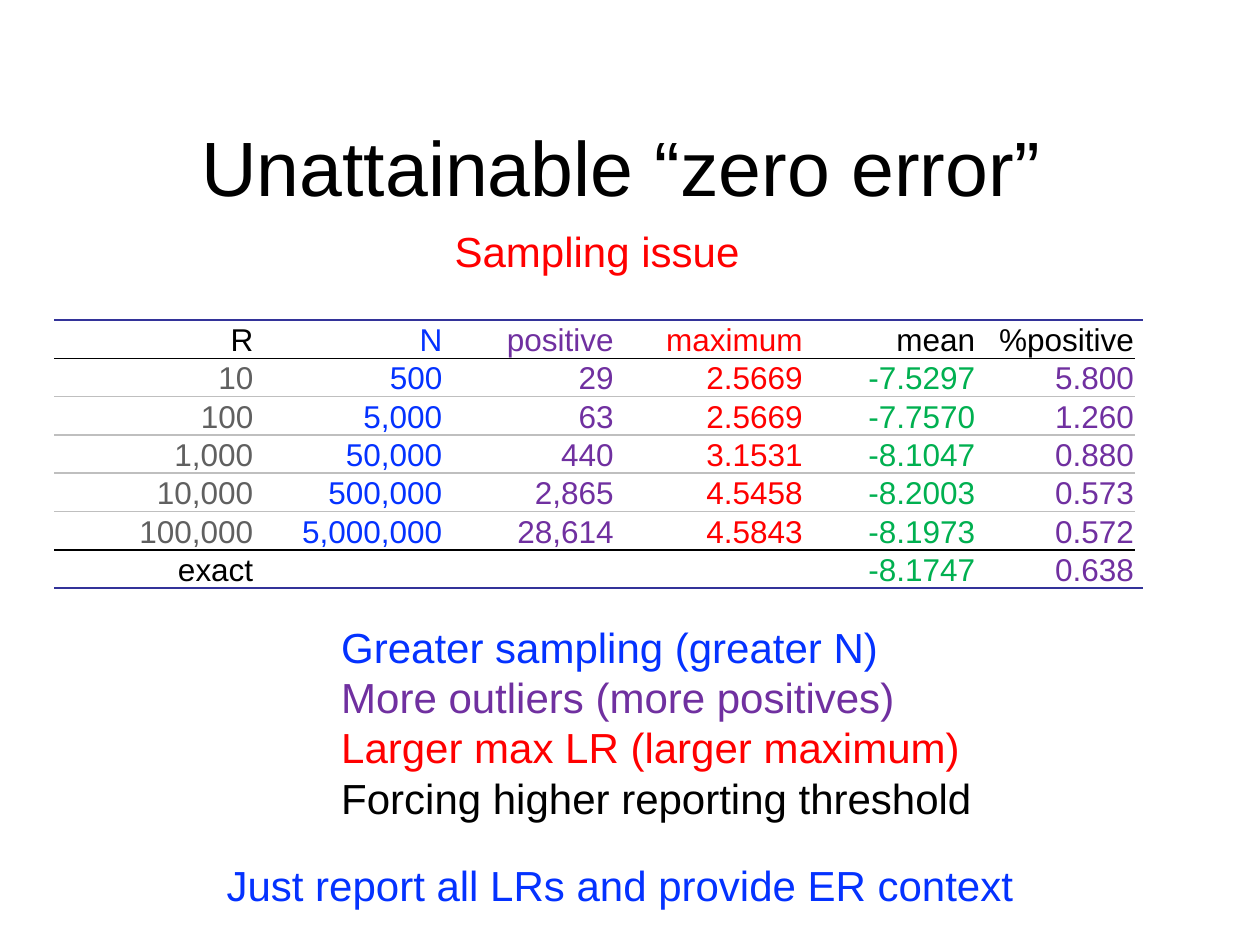
from lxml.etree import SubElement as Sub
from pptx import Presentation
from pptx.dml.color import RGBColor
from pptx.enum.text import MSO_ANCHOR as Anchor, MSO_AUTO_SIZE as Fit, PP_ALIGN as Align
from pptx.oxml import parse_xml
from pptx.oxml.ns import nsdecls, qn
from pptx.util import Inches, Pt

BLACK, BLUE, PURPLE, RED = "000000", "0432FF", "7030A0", "FF0000"
GREEN, GRAY, NAVY, RULE = "00B050", "606060", "333399", "BFBFBF"
PLAIN = "{2D5ABB26-0587-4C30-8999-92F81FD0307C}"

ROWS = [
    ["R", "N", "positive", "maximum", "mean", "%positive", ""],
    ["10", "500", "29", "2.5669", "-7.5297", "5.800", ""],
    ["100", "5,000", "63", "2.5669", "-7.7570", "1.260", ""],
    ["1,000", "50,000", "440", "3.1531", "-8.1047", "0.880", ""],
    ["10,000", "500,000", "2,865", "4.5458", "-8.2003", "0.573", ""],
    ["100,000", "5,000,000", "28,614", "4.5843", "-8.1973", "0.572", ""],
    ["exact", "", "", "", "-8.1747", "0.638", ""],
]
WIDTHS = [1.59, 1.5, 1.36, 1.5, 1.37, 1.26, 0.05]
HEAD = [BLACK, BLUE, PURPLE, RED, BLACK, BLACK, BLACK]
BODY = [GRAY, BLUE, PURPLE, RED, GREEN, PURPLE, BLACK]
LAST = [BLACK] + BODY[1:]
EDGES = [NAVY, BLACK, RULE, RULE, RULE, RULE, BLACK, NAVY]


def color(hex):
    """Turn a hex string into a colour."""
    return RGBColor.from_string(hex)


def style(para, size, hex, align=Align.LEFT):
    """Set the font and alignment of a paragraph."""
    para.alignment = align
    para.font.name = "Arial"
    para.font.size = Pt(size)
    para.font.color.rgb = color(hex)


def add_title(slide, box, text):
    """Fill and move the title placeholder."""
    title = slide.shapes.title
    title.left, title.top, title.width, title.height = map(Inches, box)
    title.text_frame.text = text
    title.text_frame.vertical_anchor = Anchor.MIDDLE
    style(title.text_frame.paragraphs[0], 44, BLACK, Align.CENTER)


def add_lines(slide, box, lines):
    """Add a text box with one coloured paragraph for each line."""
    frame = slide.shapes.add_textbox(*map(Inches, box)).text_frame
    frame.word_wrap = False
    frame.auto_size = Fit.SHAPE_TO_FIT_TEXT
    frame.text = "\n".join(text for text, _ in lines)
    for para, (_, hex) in zip(frame.paragraphs, lines):
        style(para, 24, hex)


def add_edge(cell, side, hex):
    """Append a cell border, or an empty one when there is no colour."""
    line = parse_xml(f'<a:{side} {nsdecls("a")} w="12700"/>')
    if hex:
        fill = Sub(line, qn("a:solidFill"))
        Sub(fill, qn("a:srgbClr"), val=hex)
    else:
        Sub(line, qn("a:noFill"))
    cell._tc.get_or_add_tcPr().append(line)


def fill_cell(cell, text, hex, top, base):
    """Write one table cell and draw its borders."""
    cell.text = text
    style(cell.text_frame.paragraphs[0], 18, hex, Align.RIGHT)
    cell.vertical_anchor = Anchor.BOTTOM
    cell.margin_left = cell.margin_right = cell.margin_top = Inches(0.01)
    cell.margin_bottom = 0
    for side, edge in zip(("lnL", "lnR", "lnT", "lnB"), (None, None, top, base)):
        add_edge(cell, side, edge)
    cell.fill.background()


def add_grid(slide, box):
    """Add the table of sampling results."""
    shape = slide.shapes.add_table(len(ROWS), len(WIDTHS), *map(Inches, box))
    table = shape.table
    table.first_row = table.horz_banding = False
    table._tbl.tblPr.find(qn("a:tableStyleId")).text = PLAIN
    for col, width in zip(table.columns, WIDTHS):
        col.width = Inches(width)
    hues = [HEAD] + [BODY] * (len(ROWS) - 2) + [LAST]
    for r, row in enumerate(ROWS):
        table.rows[r].height = Inches(box[3] / len(ROWS))
        for c, text in enumerate(row):
            pair = EDGES[r:r + 2]
            if c == len(WIDTHS) - 1:
                pair = [edge if edge == NAVY else None for edge in pair]
            fill_cell(table.cell(r, c), text, hues[r][c], *pair)


def main():
    """Build and save the slide."""
    deck = Presentation()
    deck.slide_width, deck.slide_height = Inches(10), Inches(7.5)
    slide = deck.slides.add_slide(deck.slide_layouts[5])
    add_title(slide, (0.29, 0.69, 9.28, 1.25), "Unattainable “zero error”")
    add_grid(slide, (0.43, 2.54, 8.63, 2.13))
    add_lines(slide, (2.61, 4.88, 5.26, 1.72), [
        ("Greater sampling (greater N)", BLUE),
        ("More outliers (more positives)", PURPLE),
        ("Larger max LR (larger maximum)", RED),
        ("Forcing higher reporting threshold", BLACK),
    ])
    add_lines(slide, (1.7, 6.77, 6.6, 0.5),
              [("Just report all LRs and provide ER context", BLUE)])
    add_lines(slide, (3.51, 1.74, 2.49, 0.5), [("Sampling issue", RED)])
    deck.save("out.pptx")


if __name__ == "__main__":
    main()
